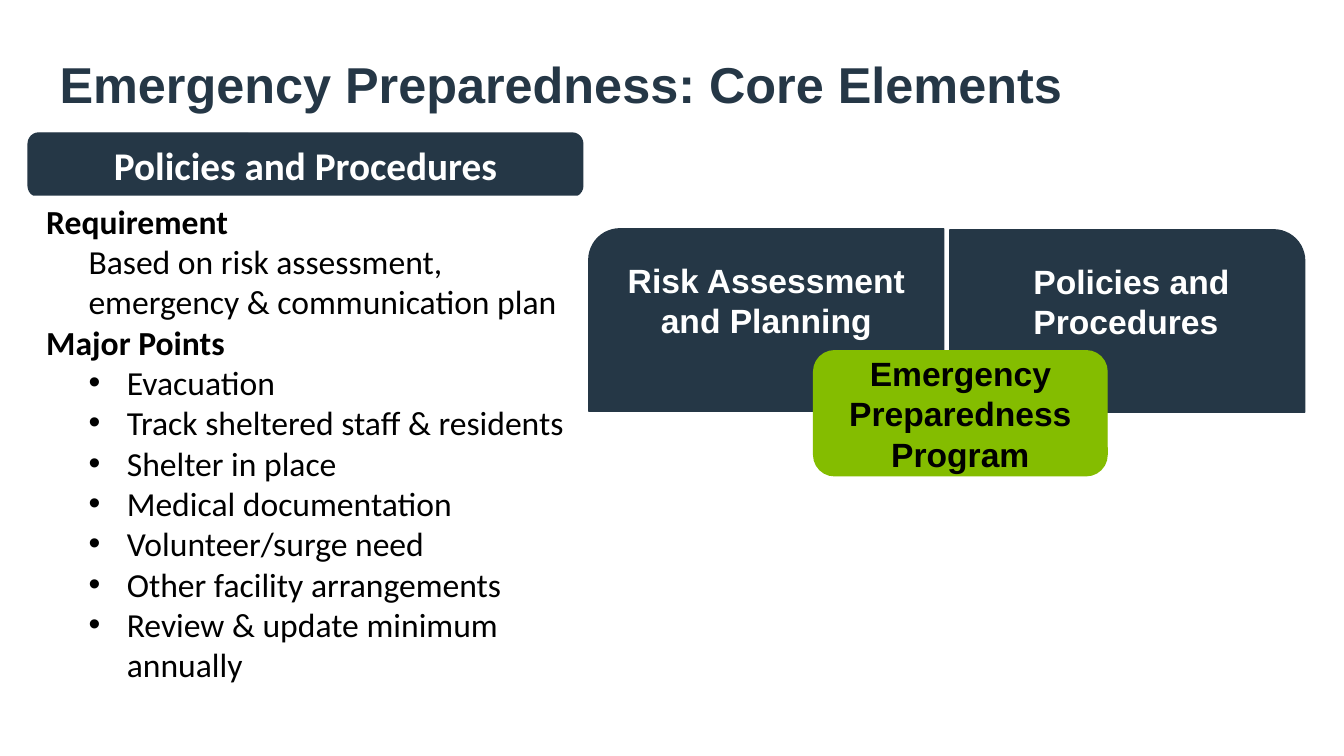
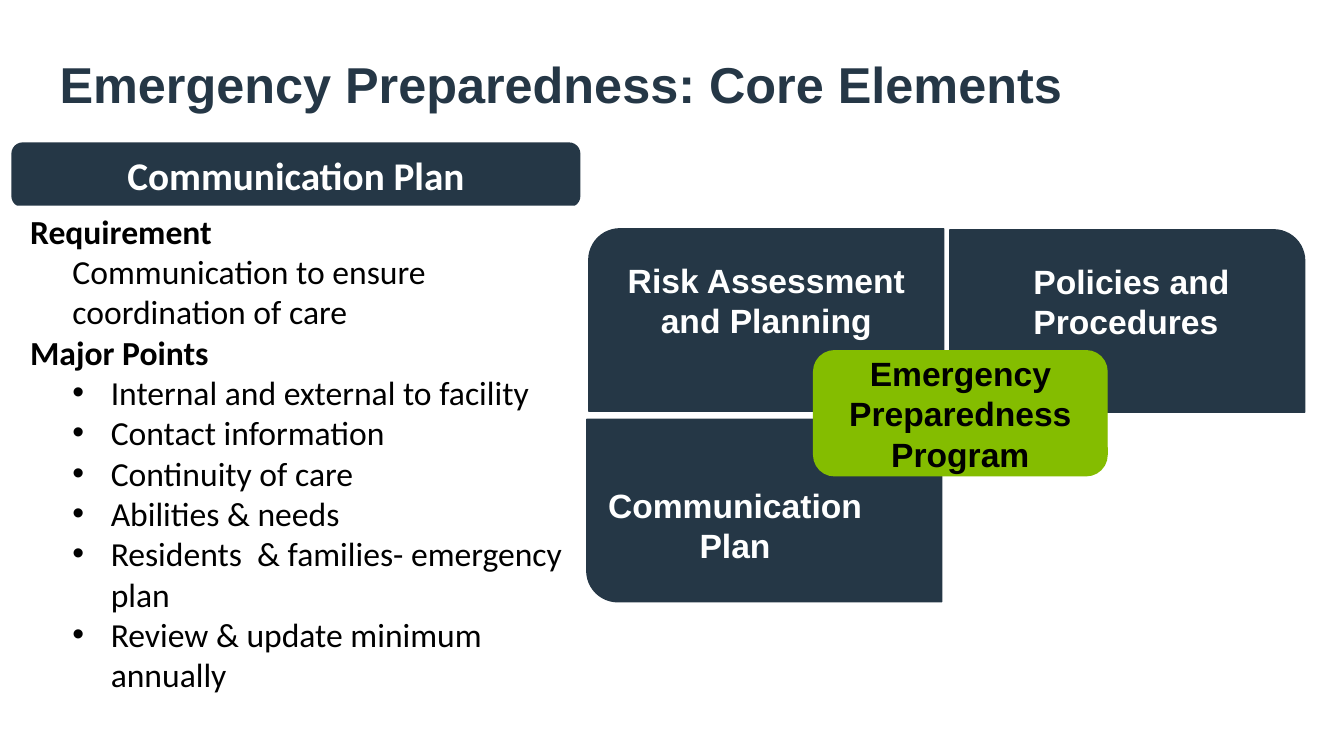
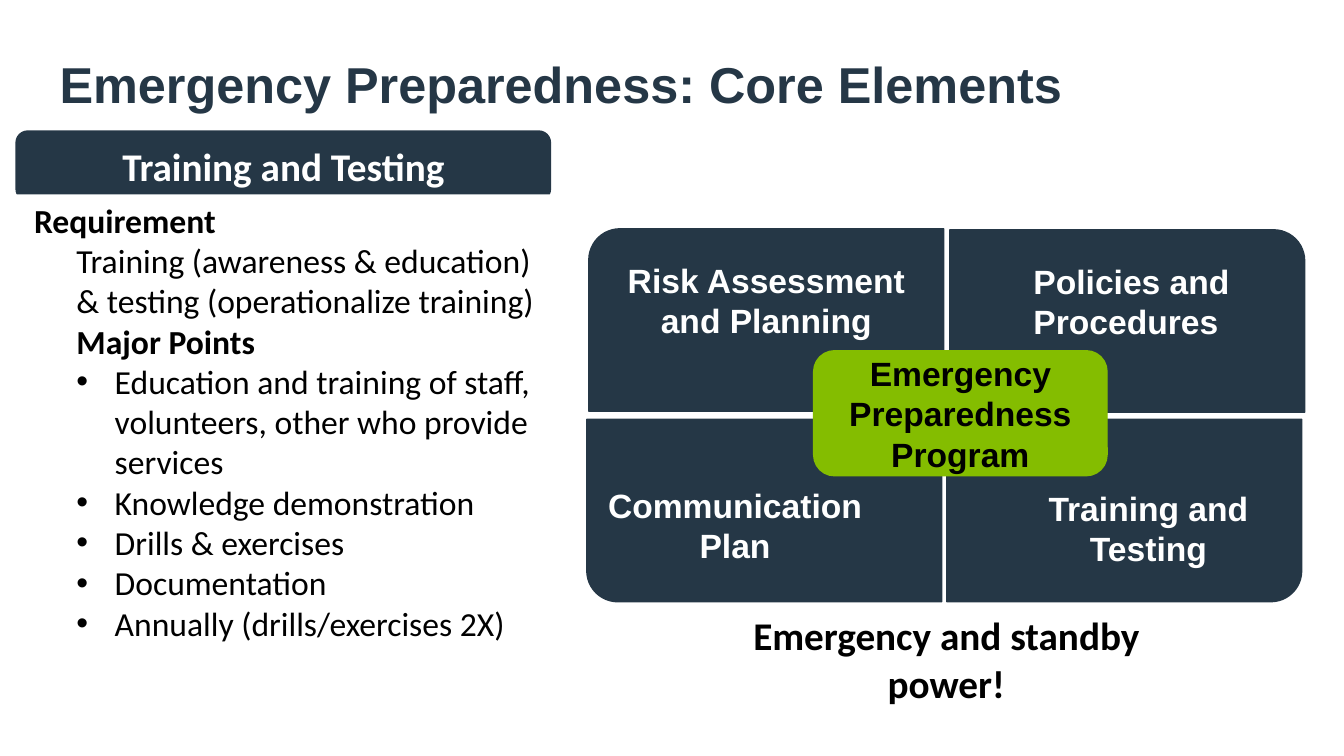
from lxml import etree
from pptx import Presentation
from pptx.dml.color import RGBColor
from pptx.enum.shapes import MSO_SHAPE as Shape
from pptx.enum.text import MSO_ANCHOR as Anchor, MSO_AUTO_SIZE as AutoSize, PP_ALIGN as Align
from pptx.oxml.ns import qn
from pptx.util import Inches, Pt

NAVY = RGBColor(0x25, 0x37, 0x46)
GREEN = RGBColor(0x84, 0xBD, 0x00)
BLACK = RGBColor(0, 0, 0)
WHITE = RGBColor(255, 255, 255)

TITLE = "Emergency Preparedness: Core Elements"
HUB = "Emergency Preparedness Program"
ROUND = 0.17
FALLING, RISING = (ROUND, 0), (0, ROUND)
QUADRANT_SIZE = (3.52, 1.81)

QUADRANTS = [
    ("Risk Assessment and Planning", 5.84, 2.27, FALLING, Align.CENTER, (0.1, 0.22, 0.1)),
    ("Policies and Procedures", 9.42, 2.28, RISING, Align.LEFT, (0.74, 0.22, 0.08)),
    ("Communication Plan", 5.82, 4.16, RISING, Align.CENTER, (0.12, 0.56, 0.7)),
    ("Training and Testing", 9.39, 4.16, FALLING, Align.CENTER, (0.65, 0.59, 0.17)),
]

HEADING, INDENTED_HEADING, BODY, BULLET = "heading", "indented heading", "body", "bullet"
INDENTS = {HEADING: (0.08, 0), INDENTED_HEADING: (0.5, 0), BODY: (0.5, 0), BULLET: (0.88, -0.38)}

TOPICS = [
    {
        "heading": "Policies and Procedures",
        "header": (0.28, 1.32, 5.5, 0.63),
        "panel": (0.28, 1.94, 5.5, 4.95),
        "requirement": "Based on risk assessment, emergency & communication plan",
        "points_style": HEADING,
        "points": [
            "Evacuation",
            "Track sheltered staff & residents",
            "Shelter in place",
            "Medical documentation",
            "Volunteer/surge need",
            "Other facility arrangements",
            "Review & update minimum annually",
        ],
    },
    {
        "heading": "Communication Plan",
        "header": (0.12, 1.42, 5.63, 0.63),
        "panel": (0.12, 2.04, 5.61, 4.95),
        "requirement": "Communication to ensure coordination of care",
        "points_style": HEADING,
        "points": [
            "Internal and external to facility",
            "Contact information",
            "Continuity of care",
            "Abilities & needs",
            "Residents  & families- emergency plan",
            "Review & update minimum annually",
        ],
    },
    {
        "heading": "Training and Testing",
        "header": (0.16, 1.3, 5.3, 0.69),
        "panel": (0.16, 1.93, 5.3, 4.54),
        "requirement": "Training (awareness & education) & testing (operationalize training)",
        "points_style": INDENTED_HEADING,
        "points": [
            "Education and training of staff, volunteers, other who provide services",
            "Knowledge demonstration",
            "Drills & exercises",
            "Documentation",
            "Annually (drills/exercises 2X)",
        ],
    },
]


class CoreDeck:
    """Holds the deck style and the current page."""

    def __init__(self):
        self.deck = Presentation()
        self.deck.slide_width, self.deck.slide_height = Inches(13.33), Inches(7.5)
        self.page = None

    def add_span(self, para, text, size, color, font="Arial", bold=True, align=Align.CENTER):
        para.alignment = align
        span = para.add_run()
        span.text = text
        span.font.name, span.font.size = font, Pt(size)
        span.font.bold, span.font.color.rgb = bold, color

    def add_page(self):
        self.page = self.deck.slides.add_slide(self.deck.slide_layouts[5])
        title = self.page.shapes.title
        title.left, title.top, title.width, title.height = map(Inches, (0.59, 0.37, 11.41, 0.69))
        frame = title.text_frame
        frame.margin_left = frame.margin_top = frame.margin_right = frame.margin_bottom = 0
        frame.vertical_anchor, frame.auto_size = Anchor.TOP, AutoSize.NONE
        frame.word_wrap = True
        para = frame.paragraphs[0]
        para.line_spacing = Pt(54.6)
        self.add_span(para, TITLE, 36, NAVY, align=Align.LEFT)

    def add_block(self, kind, place, fill, text, size, color, font="Arial", align=Align.CENTER):
        box = self.page.shapes.add_shape(kind, *map(Inches, place))
        box.shadow.inherit = False
        box.fill.solid()
        box.fill.fore_color.rgb = box.line.color.rgb = fill
        box.line.width = Pt(1)
        box.text_frame.word_wrap = True
        box.text_frame.vertical_anchor = Anchor.MIDDLE
        self.add_span(box.text_frame.paragraphs[0], text, size, color, font, align=align)
        return box

    def add_quadrant(self, label, left, top, corners, align, insets):
        place = (left, top, *QUADRANT_SIZE)
        box = self.add_block(Shape.ROUND_2_DIAG_RECTANGLE, place, NAVY, label, 24, WHITE, align=align)
        box.adjustments[0], box.adjustments[1] = corners
        frame = box.text_frame
        frame.vertical_anchor = Anchor.TOP
        frame.margin_left, frame.margin_top, frame.margin_right = map(Inches, insets)

    def add_hub(self):
        self.add_block(Shape.ROUNDED_RECTANGLE, (8.07, 3.48, 2.91, 1.24), GREEN, HUB, 24, BLACK)

    def add_text_box(self, place):
        box = self.page.shapes.add_textbox(*map(Inches, place))
        box.text_frame.word_wrap = True
        return box

    def add_panel(self, topic):
        self.add_block(Shape.ROUNDED_RECTANGLE, topic["header"], NAVY, topic["heading"], 28, WHITE, "Calibri")
        box = self.add_text_box(topic["panel"])
        box.fill.solid()
        box.fill.fore_color.rgb = WHITE
        lines = [
            (HEADING, "Requirement"),
            (BODY, topic["requirement"]),
            (topic["points_style"], "Major Points"),
            *((BULLET, point) for point in topic["points"]),
        ]
        for index, (style, text) in enumerate(lines):
            para = box.text_frame.add_paragraph() if index else box.text_frame.paragraphs[0]
            self.indent(para, style)
            bold = style in (HEADING, INDENTED_HEADING)
            self.add_span(para, text, 24, BLACK, "Calibri", bold, Align.LEFT)

    def indent(self, para, style):
        margin, hanging = INDENTS[style]
        properties = para._p.get_or_add_pPr()
        properties.set("marL", str(Inches(margin)))
        properties.set("indent", str(Inches(hanging)))
        if style == BULLET:
            etree.SubElement(properties, qn("a:buFont")).set("typeface", "Arial")
            etree.SubElement(properties, qn("a:buChar")).set("char", "•")

    def add_note(self, text, place):
        box = self.add_text_box(place)
        self.add_span(box.text_frame.paragraphs[0], text, 28, BLACK, "Calibri")


def main():
    core = CoreDeck()
    for shown, topic in enumerate(TOPICS, start=2):
        core.add_page()
        for quadrant in QUADRANTS[:shown]:
            core.add_quadrant(*quadrant)
        core.add_hub()
        core.add_panel(topic)
    core.add_note("Emergency and standby power!", (6.91, 6.02, 4.95, 1.04))
    core.deck.save("out.pptx")


if __name__ == "__main__":
    main()
